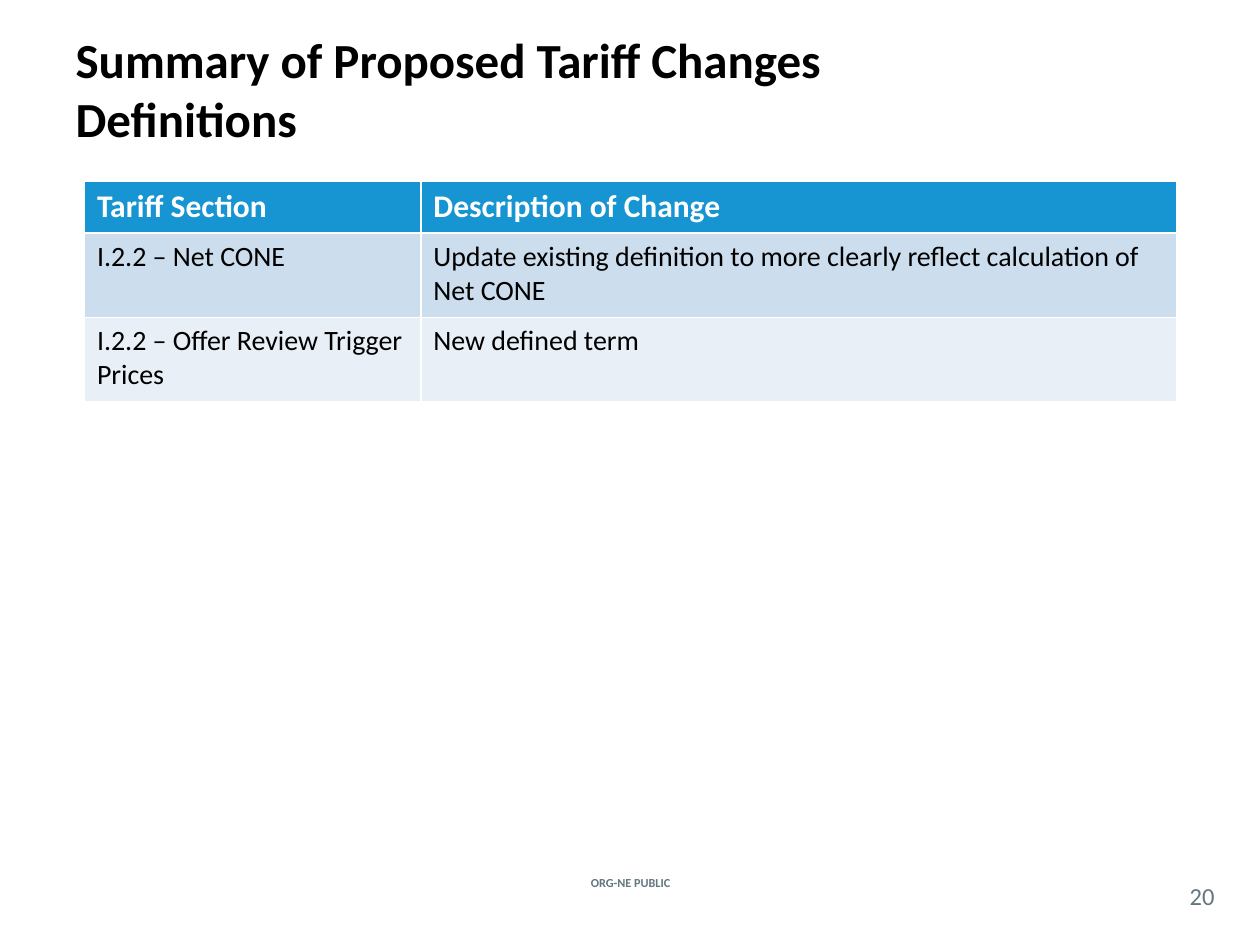
from pptx import Presentation
from pptx.dml.color import RGBColor
from pptx.enum.text import MSO_ANCHOR, PP_ALIGN
from pptx.util import Inches, Pt

MIDDLE = MSO_ANCHOR.MIDDLE
LEFT, CENTER = PP_ALIGN.LEFT, PP_ALIGN.CENTER
FONT = "Calibri"
COLORS = {
    "text": "000000",
    "header_text": "FFFFFF",
    "header": "1795D2",
    "band_dark": "CCDDEE",
    "band_light": "E8EFF7",
    "footer": "62777F",
}

TITLE = "Summary of Proposed Tariff Changes\vDefinitions"
ROWS = [
    ("Tariff Section", "Description of Change"),
    ("I.2.2 – Net CONE",
     "Update existing definition to more clearly reflect calculation of Net CONE"),
    ("I.2.2 – Offer Review Trigger Prices", "New defined term"),
]
COL_WIDTHS = (2.67, 6)
ROW_HEIGHTS = (0.41, 0.67, 0.67)
ROW_FILLS = ("header", "band_dark", "band_light")
FOOTERS = [
    ("ORG-NE PUBLIC", (4.27, 6.92, 1.47, 0.17), 7, True),
    ("20", (9.33, 6.96, 0.42, 0.29), 14, False),
]


def rgb(name):
    return RGBColor.from_string(COLORS[name])


def style(p, size, color, bold, align=LEFT):
    p.alignment = align
    p.font.name = FONT
    p.font.size = Pt(size)
    p.font.bold = bold
    p.font.color.rgb = rgb(color)


def add_title(s):
    sp = s.shapes.title
    sp.left, sp.top, sp.width, sp.height = map(Inches, (0.5, 0.08, 9, 1.25))
    tf = sp.text_frame
    tf.text = TITLE
    tf.vertical_anchor = MIDDLE
    style(tf.paragraphs[0], 28, "text", True)


def add_changes_table(s):
    size = map(Inches, (0.67, 1.44, sum(COL_WIDTHS), sum(ROW_HEIGHTS)))
    table = s.shapes.add_table(len(ROWS), len(COL_WIDTHS), *size).table
    for column, width in zip(table.columns, COL_WIDTHS):
        column.width = Inches(width)
    for i, (row, height) in enumerate(zip(table.rows, ROW_HEIGHTS)):
        row.height = Inches(height)
        header = i == 0
        for cell, text in zip(row.cells, ROWS[i]):
            cell.text = text
            cell.fill.solid()
            cell.fill.fore_color.rgb = rgb(ROW_FILLS[i])
            style(cell.text_frame.paragraphs[0], 18 if header else 16,
                  "header_text" if header else "text", header)


def add_footer(s, text, box, size, bold):
    tf = s.shapes.add_textbox(*map(Inches, box)).text_frame
    tf.word_wrap = True
    tf.vertical_anchor = MIDDLE
    tf.margin_left = tf.margin_right = tf.margin_top = tf.margin_bottom = 0
    tf.text = text
    style(tf.paragraphs[0], size, "footer", bold, CENTER)


def main():
    prs = Presentation()
    prs.slide_width, prs.slide_height = Inches(10), Inches(7.5)
    s = prs.slides.add_slide(prs.slide_layouts[5])
    add_title(s)
    add_changes_table(s)
    for footer in FOOTERS:
        add_footer(s, *footer)
    prs.save("out.pptx")


if __name__ == "__main__":
    main()
